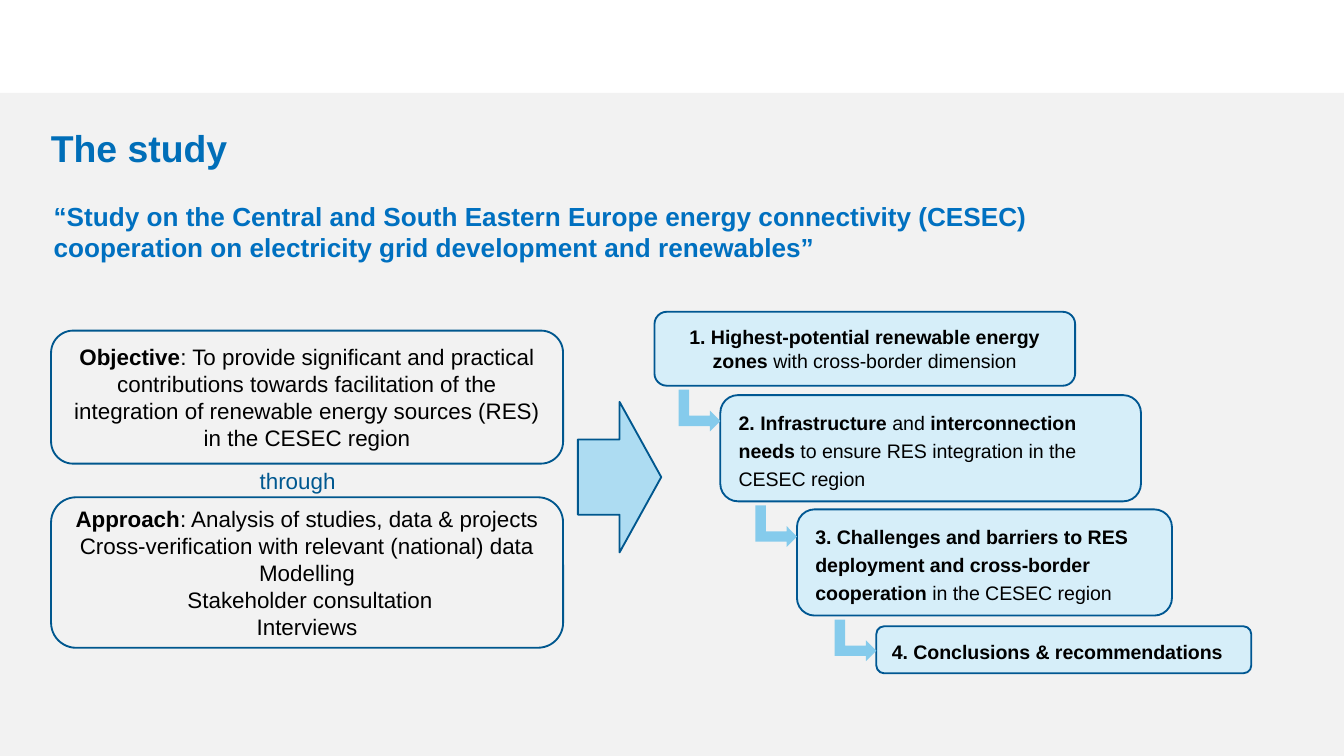
from pptx import Presentation
from pptx.dml.color import RGBColor
from pptx.enum.shapes import MSO_SHAPE
from pptx.enum.text import MSO_ANCHOR, PP_ALIGN
from pptx.util import Inches, Pt

WHITE = RGBColor(0xFF, 0xFF, 0xFF)
BLACK = RGBColor(0x00, 0x00, 0x00)
PANEL_GREY = RGBColor(0xF2, 0xF2, 0xF2)
TITLE_BLUE = RGBColor(0x00, 0x6E, 0xB8)
QUOTE_BLUE = RGBColor(0x00, 0x70, 0xC0)
LINK_BLUE = RGBColor(0x00, 0x58, 0x90)
OUTLINE_BLUE = RGBColor(0x00, 0x57, 0x8E)
STEP_LINE_BLUE = RGBColor(0x00, 0x57, 0x92)
STEP_BLUE = RGBColor(0xD6, 0xEE, 0xF9)
ARROW_BLUE = RGBColor(0xAD, 0xDC, 0xF2)
BEND_BLUE = RGBColor(0x85, 0xCB, 0xEC)

# Paragraphs are lists of (text, bold) spans
OBJECTIVE = [[
    ("Objective", True),
    (": To provide significant and practical contributions towards facilitation "
     "of the integration of renewable energy sources (RES) in the CESEC region", False),
]]
APPROACH = [
    [("Approach", True), (": Analysis of studies, data & projects", False)],
    [("Cross-verification with relevant (national) data", False)],
    [("Modelling", False)],
    [(" Stakeholder consultation", False)],
    [("Interviews", False)],
]

# Each step: left, top, width, height, alignment, line spacing, spans
STEPS = [
    (0, 0, 3.13, 0.55, PP_ALIGN.CENTER, 1.0, [
        ("1. Highest-potential renewable energy zones ", True),
        ("with cross-border dimension", False)]),
    (0.49, 0.62, 3.13, 0.79, PP_ALIGN.LEFT, 1.2, [
        ("2. Infrastructure ", True), ("and", False),
        (" interconnection needs ", True),
        ("to ensure RES integration in the CESEC region", False)]),
    (1.06, 1.47, 2.79, 0.79, PP_ALIGN.LEFT, 1.2, [
        ("3. Challenges and barriers to RES deployment and cross-border cooperation ", True),
        ("in the CESEC region", False)]),
    (1.65, 2.34, 2.79, 0.35, PP_ALIGN.LEFT, 1.2, [
        ("4. Conclusions & recommendations", True)]),
]


def add_shape(page, kind, left, top, width, height, fill=None, line=None):
    shape = page.shapes.add_shape(
        kind, Inches(left), Inches(top), Inches(width), Inches(height))
    shape.shadow.inherit = False
    if fill is None:
        shape.fill.background()
    else:
        shape.fill.solid()
        shape.fill.fore_color.rgb = fill
    if line is None:
        shape.line.fill.background()
    else:
        shape.line.color.rgb = line
        shape.line.width = Pt(1)
    return shape


def write(shape, paragraphs, size, color=BLACK, align=PP_ALIGN.LEFT,
          spacing=1.0, anchor=MSO_ANCHOR.MIDDLE):
    frame = shape.text_frame
    frame.word_wrap = True
    frame.vertical_anchor = anchor
    for index, spans in enumerate(paragraphs):
        para = frame.add_paragraph() if index else frame.paragraphs[0]
        para.alignment = align
        para.line_spacing = spacing
        for text, bold in spans:
            span = para.add_run()
            span.text = text
            span.font.name = "Arial"
            span.font.size = Pt(size)
            span.font.bold = bold
            span.font.color.rgb = color


def add_heading(page, left, top, width):
    """Title and the quoted name of the study."""
    title = page.shapes.add_textbox(
        Inches(left), Inches(top), Inches(width), Inches(0.55))
    write(title, [[("The study", True)]], 20, TITLE_BLUE, spacing=0.9)
    quote = page.shapes.add_textbox(
        Inches(left + 0.02), Inches(top + 0.6), Inches(width - 0.04), Inches(0.57))
    write(quote, [[(
        "“Study on the Central and South Eastern Europe energy connectivity (CESEC) "
        "cooperation on electricity grid development and renewables”", True)]],
        14, QUOTE_BLUE, anchor=MSO_ANCHOR.TOP)


def add_purpose(page, left, top, width):
    """Objective and approach, joined by the word between them."""
    for offset, height, paragraphs in ((0, 0.99, OBJECTIVE), (1.24, 1.12, APPROACH)):
        box = add_shape(page, MSO_SHAPE.ROUNDED_RECTANGLE,
                        left, top + offset, width, height, line=OUTLINE_BLUE)
        write(box, paragraphs, 12, align=PP_ALIGN.CENTER)
    link = add_shape(page, MSO_SHAPE.ROUNDED_RECTANGLE,
                     left + 1.28, top + 1, 1.11, 0.23)
    write(link, [[("through", False)]], 12, LINK_BLUE, PP_ALIGN.CENTER)


def add_steps(page, left, top):
    """Staircase of steps; a bent arrow leads into each step after the first."""
    bend = 0.31
    bottom = None
    for x, y, width, height, align, spacing, spans in STEPS:
        box = add_shape(page, MSO_SHAPE.ROUNDED_RECTANGLE,
                        left + x, top + y, width, height, STEP_BLUE, STEP_LINE_BLUE)
        write(box, [spans], 10.5, align=align, spacing=spacing)
        if bottom is not None:
            arrow = add_shape(page, MSO_SHAPE.BENT_UP_ARROW,
                              left + x - bend, bottom + 0.03, bend, bend, BEND_BLUE)
            arrow.rotation = 90
        bottom = top + y + height


def main():
    deck = Presentation()
    deck.slide_width = Inches(10)
    deck.slide_height = deck.slide_width * 9 // 16
    page = deck.slides.add_slide(deck.slide_layouts[6])

    # Background with the grey panel
    page.background.fill.solid()
    page.background.fill.fore_color.rgb = WHITE
    add_shape(page, MSO_SHAPE.RECTANGLE, 0, 0.69, 10.01, 4.98, PANEL_GREY)

    add_heading(page, 0.28, 0.84, 8.62)
    add_purpose(page, 0.38, 2.46, 3.81)
    add_steps(page, 4.87, 2.32)

    # Arrow from purpose to steps
    add_shape(page, MSO_SHAPE.RIGHT_ARROW, 4.3, 2.99, 0.62, 1.12,
              ARROW_BLUE, OUTLINE_BLUE)

    deck.save("out.pptx")


if __name__ == "__main__":
    main()
